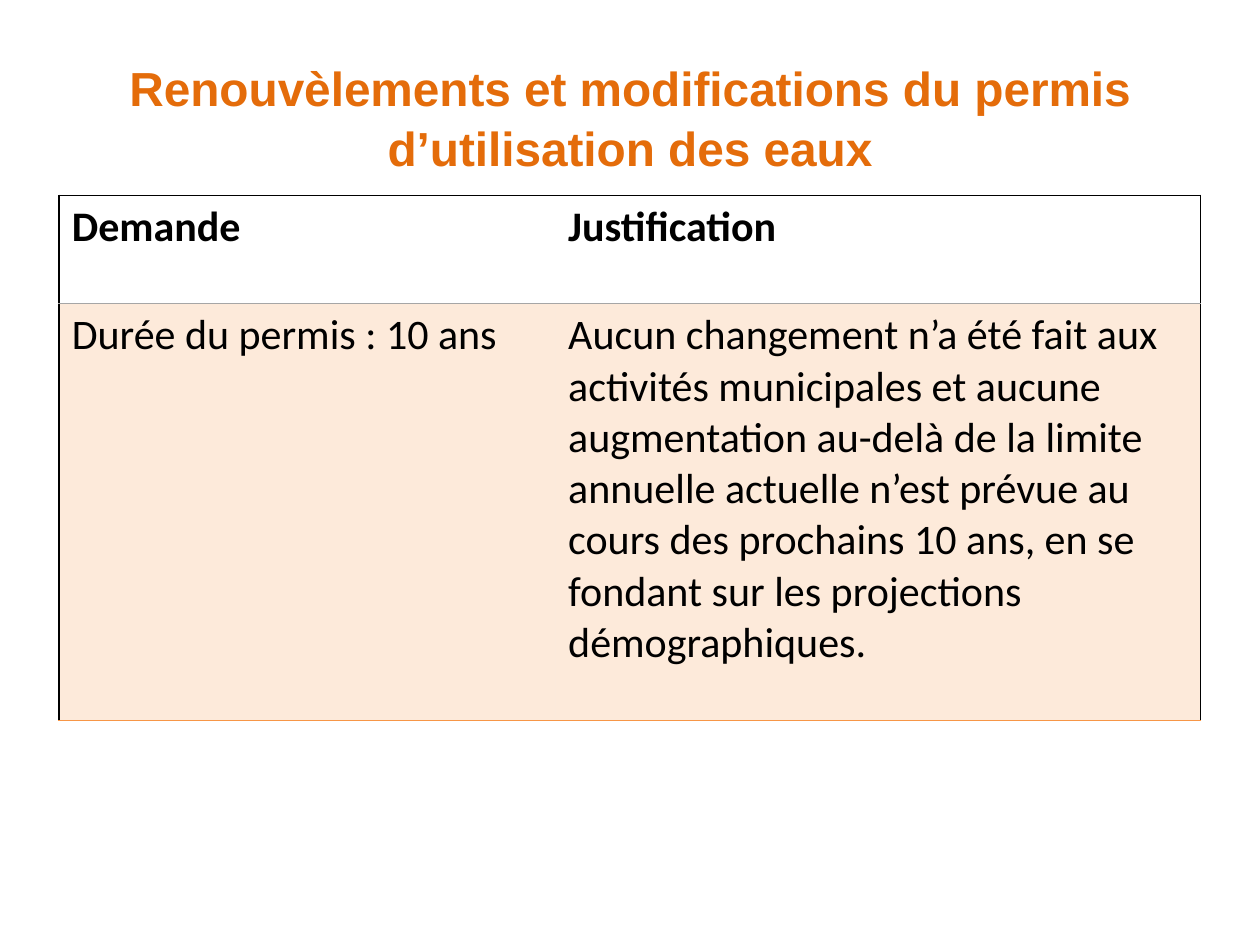
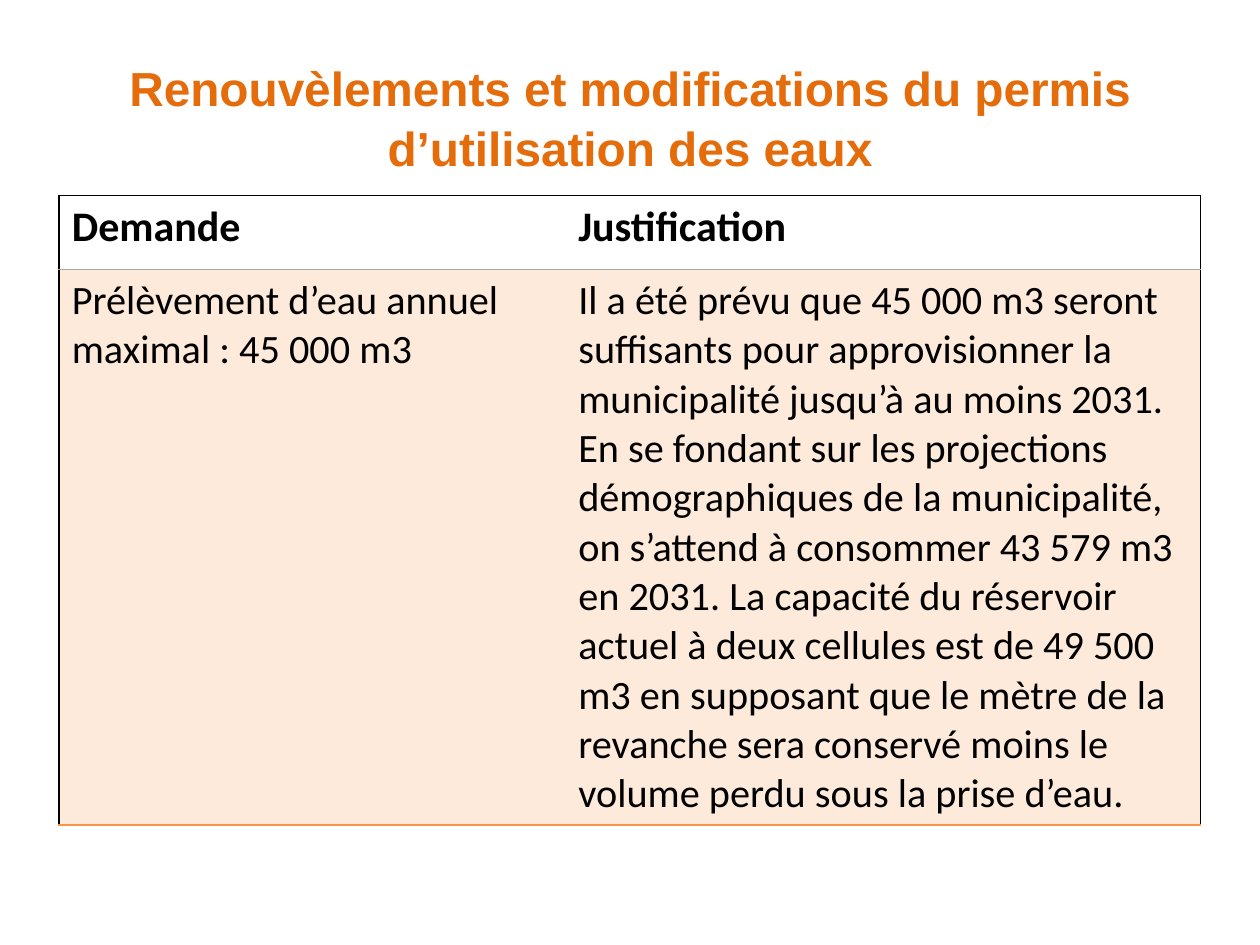
from dataclasses import dataclass

import pptx
import pptx.dml.color
import pptx.enum.text
import pptx.oxml
import pptx.oxml.ns
import pptx.util
from pptx.util import Inches


@dataclass(frozen=True)
class Theme:
    title_font: str = "Arial"
    body_font: str = "Calibri"
    title_color: str = "E46C0A"
    text_color: str = "000000"
    accent: str = "F79646"
    frame: str = "000000"
    divider: str = "A6A6A6"
    tint_percent: int = 20
    title_size: float = 27.3
    table_size: float = 24
    dense_table_size: float = 23
    title_spacing: float = 1.04
    border_width: float = 1


TITLE = "Renouvèlements et modifications du permis d’utilisation des eaux"
HEADINGS = ("Demande", "Justification")


class Deck:
    def __init__(self, theme):
        self.theme = theme
        self.presentation = pptx.Presentation()
        self.presentation.slide_width = Inches(10)
        self.presentation.slide_height = Inches(7.5)
        self.slide = None

    def add_slide(self, title):
        layout = self.presentation.slide_layouts.get_by_name("Title Only")
        self.slide = self.presentation.slides.add_slide(layout)
        shape = self.slide.shapes.title
        shape.left, shape.top = Inches(0), Inches(0.3)
        shape.width, shape.height = Inches(10), Inches(1.25)
        frame = shape.text_frame
        frame.word_wrap = True
        frame.auto_size = pptx.enum.text.MSO_AUTO_SIZE.NONE
        frame.vertical_anchor = pptx.enum.text.MSO_ANCHOR.MIDDLE
        paragraph = frame.paragraphs[0]
        paragraph.alignment = pptx.enum.text.PP_ALIGN.CENTER
        paragraph.line_spacing = self.theme.title_spacing
        self.add_run(paragraph, title, self.theme.title_font,
                     self.theme.title_size, self.theme.title_color, True)

    def add_run(self, paragraph, text, font_name, size, color, bold):
        run = paragraph.add_run()
        run.text = text
        run.font.name = font_name
        run.font.size = pptx.util.Pt(size)
        run.font.bold = bold
        run.font.color.rgb = pptx.dml.color.RGBColor.from_string(color)

    def add_request_table(self, request, column_widths, row_heights, body_size):
        theme = self.theme
        rows = (HEADINGS, request)
        shape = self.slide.shapes.add_table(
            len(rows), len(HEADINGS), Inches(0.47), Inches(1.55),
            Inches(sum(column_widths)), Inches(sum(row_heights)))
        table = shape.table
        table.first_row = False
        table.horz_banding = False
        for column, width in zip(table.columns, column_widths):
            column.width = Inches(width)
        for row, height in zip(table.rows, row_heights):
            row.height = Inches(height)
        for row_index, texts in enumerate(rows):
            is_header = row_index == 0
            size = theme.table_size if is_header else body_size
            for column_index, text in enumerate(texts):
                cell = table.cell(row_index, column_index)
                self.add_run(cell.text_frame.paragraphs[0], text,
                             theme.body_font, size, theme.text_color, is_header)
                self.set_borders(
                    cell,
                    L=theme.frame if column_index == 0 else None,
                    R=theme.frame if column_index == len(texts) - 1 else None,
                    T=theme.frame if is_header else theme.divider,
                    B=theme.divider if is_header else theme.accent)
                if is_header:
                    cell.fill.background()
                else:
                    self.set_tint(cell)

    def set_borders(self, cell, **edges):
        properties = cell._tc.get_or_add_tcPr()
        namespace = pptx.oxml.ns.nsdecls("a")
        width = pptx.util.Pt(self.theme.border_width)
        for edge, color in edges.items():
            paint = (f'<a:solidFill><a:srgbClr val="{color}"/></a:solidFill>'
                     if color else "<a:noFill/>")
            properties.append(pptx.oxml.parse_xml(
                f'<a:ln{edge} {namespace} w="{width}">{paint}</a:ln{edge}>'))

    def set_tint(self, cell):
        cell.fill.solid()
        cell.fill.fore_color.rgb = pptx.dml.color.RGBColor.from_string(
            self.theme.accent)
        color = cell._tc.tcPr.find(
            pptx.oxml.ns.qn("a:solidFill")).find(pptx.oxml.ns.qn("a:srgbClr"))
        color.append(pptx.oxml.parse_xml(
            f'<a:alpha {pptx.oxml.ns.nsdecls("a")} '
            f'val="{self.theme.tint_percent * 1000}"/>'))


def main():
    theme = Theme()
    deck = Deck(theme)

    deck.add_slide(TITLE)
    deck.add_request_table(
        ("Durée du permis : 10 ans",
         "Aucun changement n’a été fait aux activités municipales et aucune "
         "augmentation au-delà de la limite annuelle actuelle n’est prévue au "
         "cours des prochains 10 ans, en se fondant sur les projections "
         "démographiques."),
        (3.94, 5.12), (0.86, 3.31), theme.table_size)

    deck.add_slide(TITLE)
    deck.add_request_table(
        ("Prélèvement d’eau annuel maximal : 45 000 m3",
         "Il a été prévu que 45 000 m3 seront suffisants pour approvisionner "
         "la municipalité jusqu’à au moins 2031. En se fondant sur les "
         "projections démographiques de la municipalité, on s’attend à "
         "consommer 43 579 m3 en 2031. La capacité du réservoir actuel à deux "
         "cellules est de 49 500 m3 en supposant que le mètre de la revanche "
         "sera conservé moins le volume perdu sous la prise d’eau."),
        (4.02, 5.04), (0.59, 4.29), theme.dense_table_size)

    deck.presentation.save("out.pptx")


if __name__ == "__main__":
    main()
